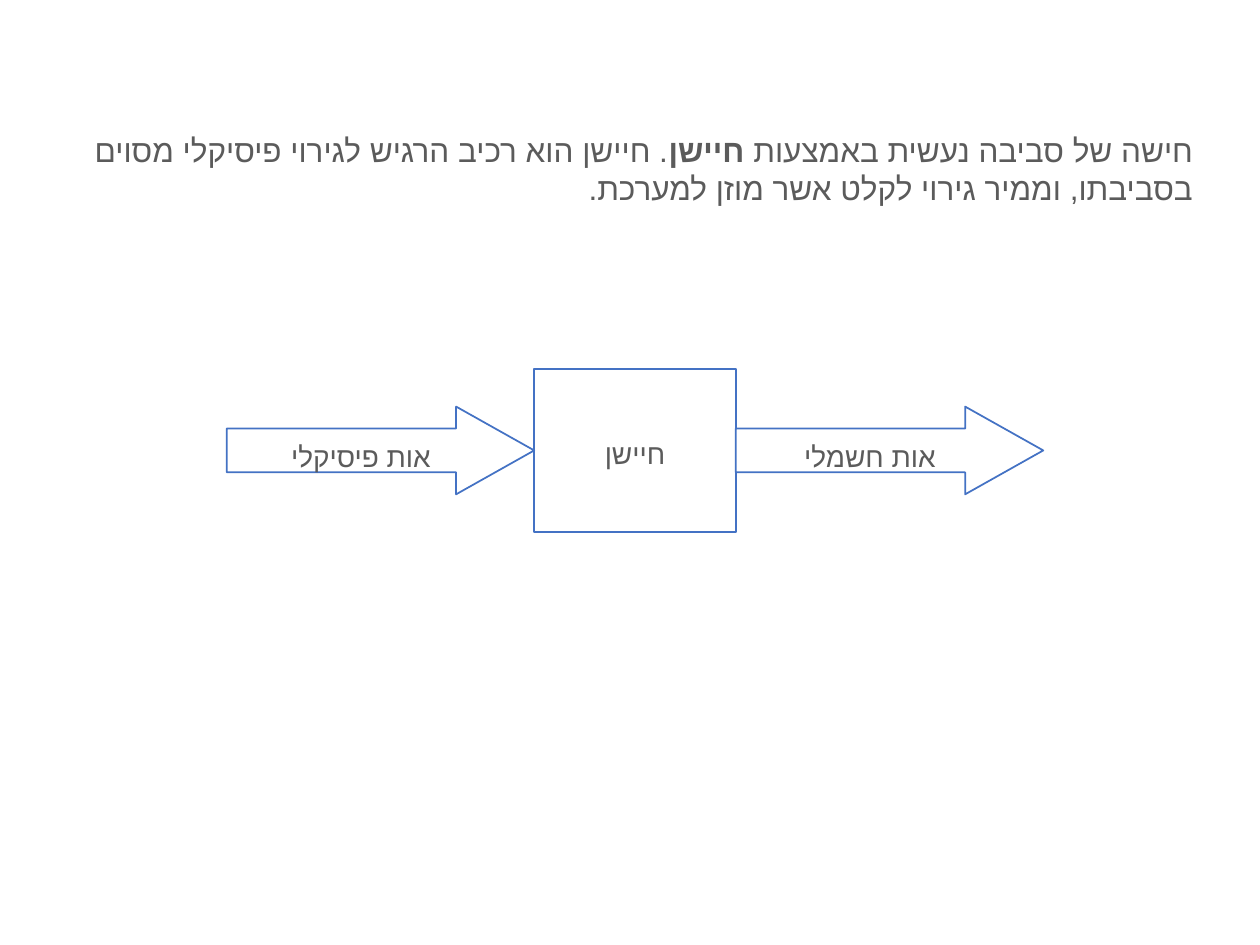
import pptx
import pptx.util
import pptx.dml.color
import pptx.enum.shapes
import pptx.enum.text
import pptx.oxml
import pptx.oxml.ns
from collections import namedtuple
from dataclasses import dataclass

Box = namedtuple("Box", "x y w h")
Shapes = pptx.enum.shapes.MSO_SHAPE
Align = pptx.enum.text.PP_ALIGN
Anchor = pptx.enum.text.MSO_ANCHOR
COLUMNS, ROWS = 100, 75


@dataclass(frozen=True)
class Theme:
    font: str = "Arial"
    text: str = "5B5B5B"
    fill: str = "FFFFFF"
    line: str = "4472C4"
    body: int = 18
    label: int = 16
    stroke: int = 1


THEME = Theme()


def rgb(value):
    return pptx.dml.color.RGBColor.from_string(value)


def grid_box(prs, x, y, w, h):
    col, row = prs.slide_width / COLUMNS, prs.slide_height / ROWS
    return Box(int(x * col), int(y * row), int(w * col), int(h * row))


def write(tf, runs, size, **formats):
    tf.word_wrap = True
    p = tf.paragraphs[0]
    p._p.get_or_add_pPr().set("rtl", "1")
    for name, value in formats.items():
        setattr(p, name, value)
    for text, bold in runs:
        r = p.add_run()
        r.text = text
        values = {"size": pptx.util.Pt(size), "name": THEME.font, "bold": bold}
        for name, value in values.items():
            setattr(r.font, name, value)
        r.font.color.rgb = rgb(THEME.text)
        cs = pptx.oxml.parse_xml(f'<a:cs {pptx.oxml.ns.nsdecls("a")} typeface="{THEME.font}"/>')
        r._r.get_or_add_rPr().append(cs)


def definition(s, box):
    tf = s.shapes.add_textbox(*box).text_frame
    write(tf, [
        ("חישה של סביבה נעשית באמצעות ", False),
        ("חיישן", True),
        (". חיישן הוא רכיב הרגיש לגירוי פיסיקלי מסוים בסביבתו, וממיר גירוי לקלט אשר מוזן למערכת.", False),
    ], THEME.body, alignment=Align.RIGHT)
    tf.auto_size = pptx.enum.text.MSO_AUTO_SIZE.SHAPE_TO_FIT_TEXT


def block(group, kind, box, label, anchor):
    sp = group.shapes.add_shape(kind, *box)
    sp.shadow.inherit = False
    sp.fill.solid()
    sp.fill.fore_color.rgb = rgb(THEME.fill)
    sp.line.color.rgb = rgb(THEME.line)
    sp.line.width = pptx.util.Pt(THEME.stroke)
    sp.text_frame.vertical_anchor = anchor
    write(sp.text_frame, [(label, False)], THEME.label,
          alignment=Align.CENTER, line_spacing=1.15)
    return sp


def sensor_flow(s, box):
    group = s.shapes.add_group_shape()
    arrow_w = int(box.w * 30.5 / 81)
    arrow_h = int(box.h * 0.54)
    arrow_y = box.y + (box.h - arrow_h) // 2
    sensor = Box(box.x + arrow_w, box.y, box.w - 2 * arrow_w, box.h)
    block(group, Shapes.RECTANGLE, sensor, "חיישן", Anchor.MIDDLE)
    for x, label in ((box.x, "אות פיסיקלי"), (sensor.x + sensor.w, "אות חשמלי")):
        arrow = block(group, Shapes.RIGHT_ARROW, Box(x, arrow_y, arrow_w, arrow_h),
                      label, Anchor.TOP)
        arrow.adjustments[0] = 0.5
        arrow.adjustments[1] = 0.89


def main():
    prs = pptx.Presentation()
    prs.slide_width = pptx.util.Inches(10)
    prs.slide_height = pptx.util.Inches(7.5)
    s = prs.slides.add_slide(prs.slide_layouts[6])
    definition(s, grid_box(prs, 5.1, 9.9, 90.6, 7.1))
    sensor_flow(s, grid_box(prs, 18, 29.3, 64.8, 12.9))
    prs.save("out.pptx")


if __name__ == "__main__":
    main()
